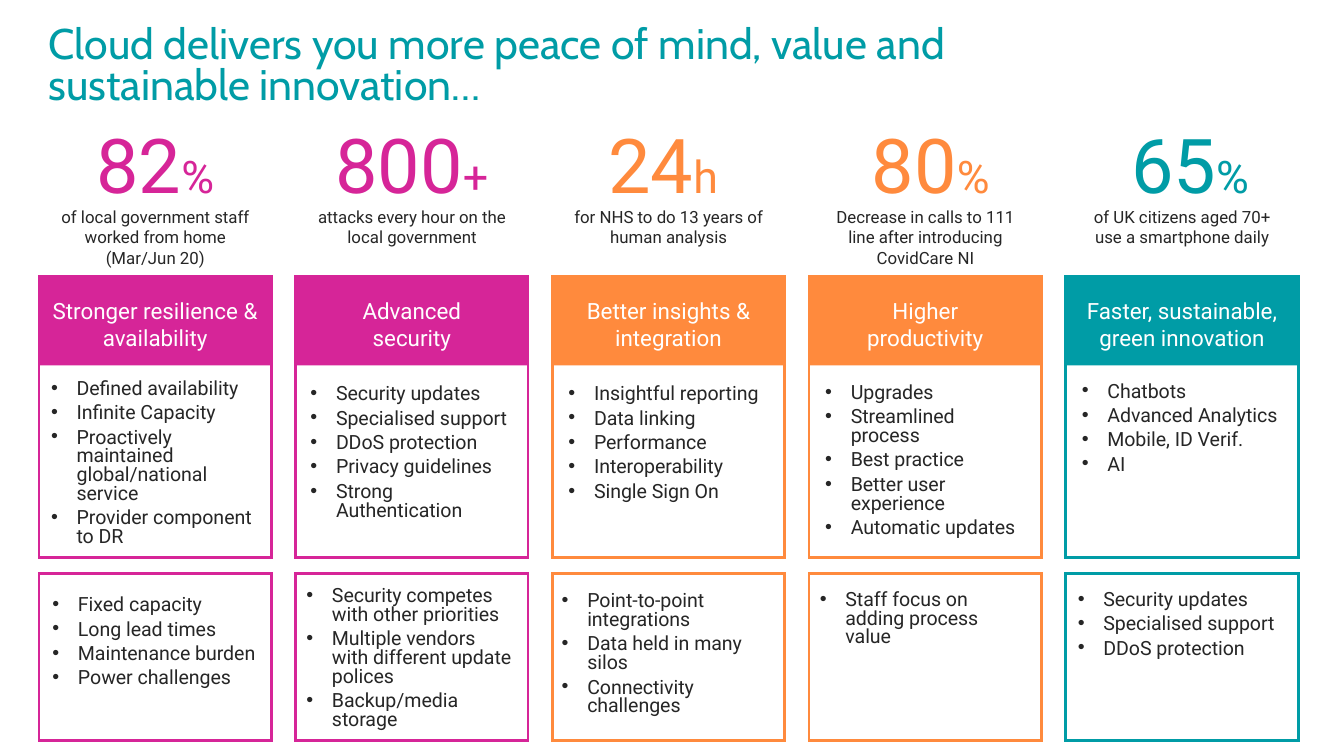
from typing import NamedTuple

from lxml.etree import SubElement
from pptx import Presentation
from pptx.dml.color import RGBColor
from pptx.enum.shapes import MSO_SHAPE as Shape
from pptx.enum.text import MSO_ANCHOR as Anchor, MSO_AUTO_SIZE as AutoSize, PP_ALIGN as Align
from pptx.oxml.ns import qn
from pptx.util import Inches, Pt

COLORS = {"pink": "D62598", "orange": "FF8A3D", "teal": "009CA6",
          "text": "262626", "white": "FFFFFF"}

SLIDE_WIDTH = 10
SLIDE_HEIGHT = SLIDE_WIDTH * 9 / 16
LEFT, PITCH, WIDTH = 0.29, 1.91, 1.73
STAT_TOP, CAPTION_TOP = 0.83, 1.49
BENEFIT_TOP, BENEFIT_HEIGHT = 2.06, 2.09
HEADER_HEIGHT, HEADING_TOP, HEADING_HEIGHT = 0.66, 2.17, 0.46
ISSUE_TOP, ISSUE_HEIGHT = 4.27, 1.24
SLIM_MARGINS = (0.07, 0.04)


class BulletList(NamedTuple):
    indent: float  # distance from the left edge of the column
    top: float
    width: float
    height: float
    items: list[str]


class Column(NamedTuple):
    color: str
    figure: str
    unit: str
    stat_shift: float
    caption: str
    caption_height: float
    heading: str
    heading_width: float
    benefits: BulletList
    issues: BulletList


COLUMNS = [
    Column("pink", "82", "%", 0, "of local government staff worked from home (Mar/Jun 20)", 0.56,
           "Stronger resilience & availability", 1.73,
           BulletList(0.02, 2.79, 1.67, 1.79, [
               "Defined availability", "Infinite Capacity",
               "Proactively maintained global/national service", "Provider component to DR"]),
           BulletList(0.03, 4.4, 1.84, 1.12, [
               "Fixed capacity", "Long lead times", "Maintenance burden", "Power challenges"])),
    Column("pink", "800", "+", 0, "attacks every hour on the local government", 0.4,
           "Advanced security", 1.48,
           BulletList(0.04, 2.83, 1.67, 1.79, [
               "Security updates", "Specialised support", "DDoS protection",
               "Privacy guidelines", "Strong Authentication"]),
           BulletList(0.01, 4.33, 1.68, 1.05, [
               "Security competes with other priorities",
               "Multiple vendors with different update polices", "Backup/media storage"])),
    Column("orange", "24", "h", -0.04, "for NHS to do 13 years of human analysis", 0.4,
           "Better insights & integration", 1.5,
           BulletList(0.05, 2.83, 1.66, 1.79, [
               "Insightful reporting", "Data linking", "Performance",
               "Interoperability", "Single Sign On"]),
           BulletList(0, 4.37, 1.67, 1.06, [
               "Point-to-point integrations", "Data held in many silos",
               "Connectivity challenges"])),
    Column("orange", "80", "%", 0.04,
           "Decrease in calls to 111 line after introducing CovidCare NI", 0.56,
           "Higher productivity", 1.5,
           BulletList(0.05, 2.82, 1.62, 1.33, [
               "Upgrades", "Streamlined process", "Best practice",
               "Better user experience", "Automatic updates"]),
           BulletList(0.01, 4.36, 1.65, 1.15, ["Staff focus on adding process value"])),
    Column("teal", "65", "%", 0.06, "of UK citizens aged 70+ use a smartphone daily", 0.4,
           "Faster, sustainable, green innovation", 1.71,
           BulletList(0.05, 2.81, 1.77, 1.79, [
               "Chatbots", "Advanced Analytics", "Mobile, ID Verif.", "AI"]),
           BulletList(0.02, 4.36, 1.66, 1.12, [
               "Security updates", "Specialised support", "DDoS protection"])),
]


def rgb(color: str) -> RGBColor:
    return RGBColor.from_string(COLORS[color])


def place(shape, left: float, top: float, width: float, height: float) -> None:
    shape.left, shape.top = Inches(left), Inches(top)
    shape.width, shape.height = Inches(width), Inches(height)


def add_bullet(paragraph) -> None:
    properties = paragraph._p.get_or_add_pPr()
    properties.set("marL", str(Inches(0.19)))
    properties.set("indent", str(-Inches(0.19)))
    SubElement(properties, qn("a:buFont")).set("typeface", "Arial")
    SubElement(properties, qn("a:buChar")).set("char", "•")


def write(shape, paragraphs: list, *, size: float, color: str, font: str = "Roboto",
          align=Align.LEFT, spacing: float = 1.0, gap: float = 0, bullets: bool = False,
          margins: tuple[float, float] = SLIM_MARGINS) -> None:
    """Each paragraph is a string, or a list of (text, size) runs."""
    frame = shape.text_frame
    frame.word_wrap = True
    frame.auto_size = AutoSize.NONE
    frame.vertical_anchor = Anchor.TOP
    frame.margin_left = frame.margin_right = Inches(margins[0])
    frame.margin_top = frame.margin_bottom = Inches(margins[1])
    for number, content in enumerate(paragraphs):
        paragraph = frame.add_paragraph() if number else frame.paragraphs[0]
        paragraph.alignment = align
        paragraph.line_spacing = spacing
        paragraph.space_before = Pt(gap if number else 0)
        if bullets:
            add_bullet(paragraph)
        for text, run_size in [(content, size)] if isinstance(content, str) else content:
            run = paragraph.add_run()
            run.text = text
            run.font.name, run.font.size = font, Pt(run_size)
            run.font.bold = False
            run.font.color.rgb = rgb(color)


def add_label(slide, left: float, top: float, width: float, height: float,
              content, **text_format) -> None:
    label = slide.shapes.add_textbox(0, 0, 0, 0)
    place(label, left, top, width, height)
    write(label, [content], align=Align.CENTER, **text_format)


def add_panel(slide, left: float, top: float, height: float, fill: str,
              border: str | None = None) -> None:
    panel = slide.shapes.add_shape(Shape.RECTANGLE, Inches(left), Inches(top),
                                   Inches(WIDTH), Inches(height))
    panel.shadow.inherit = False
    panel.fill.solid()
    panel.fill.fore_color.rgb = rgb(fill)
    if border:
        panel.line.color.rgb = rgb(border)
        panel.line.width = Pt(1.5)
        SubElement(panel.element.spPr.find(qn("a:ln")), qn("a:miter")).set("lim", "800000")
    else:
        panel.line.fill.background()


def add_list(slide, left: float, bullet_list: BulletList, bodies: list) -> None:
    """Use a body placeholder while one is free, in front of the panels."""
    if bodies:
        body = bodies.pop(0)
        slide.shapes.element.append(body.element)
    else:
        body = slide.shapes.add_textbox(0, 0, 0, 0)
    place(body, left + bullet_list.indent, *bullet_list[1:4])
    write(body, bullet_list.items, size=10.5, color="text", spacing=0.8, gap=3, bullets=True)


def add_column(slide, left: float, column: Column, bodies: list) -> None:
    add_label(slide, left + column.stat_shift, STAT_TOP, WIDTH, 0.78,
              [(column.figure, 40.5), (column.unit, 24)],
              size=40.5, color=column.color, margins=(0.1, 0.05))
    add_label(slide, left, CAPTION_TOP, WIDTH, column.caption_height, column.caption,
              size=9, color="text", margins=(0.1, 0.05))
    add_panel(slide, left, BENEFIT_TOP, BENEFIT_HEIGHT, "white", column.color)
    add_panel(slide, left, BENEFIT_TOP, HEADER_HEIGHT, column.color)
    add_label(slide, left + (WIDTH - column.heading_width) / 2, HEADING_TOP,
              column.heading_width, HEADING_HEIGHT, column.heading, size=12, color="white")
    add_list(slide, left, column.benefits, bodies)
    add_panel(slide, left, ISSUE_TOP, ISSUE_HEIGHT, "white", column.color)
    add_list(slide, left, column.issues, bodies)


def main() -> None:
    deck = Presentation()
    deck.slide_width, deck.slide_height = Inches(SLIDE_WIDTH), Inches(SLIDE_HEIGHT)
    slide = deck.slides.add_slide(deck.slide_layouts.get_by_name("Two Content"))
    title, *bodies = slide.placeholders
    place(title, 0.29, 0.16, 6.95, 0.74)
    write(title, ["Cloud delivers you more peace of mind, value and sustainable innovation…"],
          size=22.9, color="teal", font="Cabin", spacing=0.8)
    for number, column in enumerate(COLUMNS):
        add_column(slide, LEFT + number * PITCH, column, bodies)
    deck.save("out.pptx")


if __name__ == "__main__":
    main()
